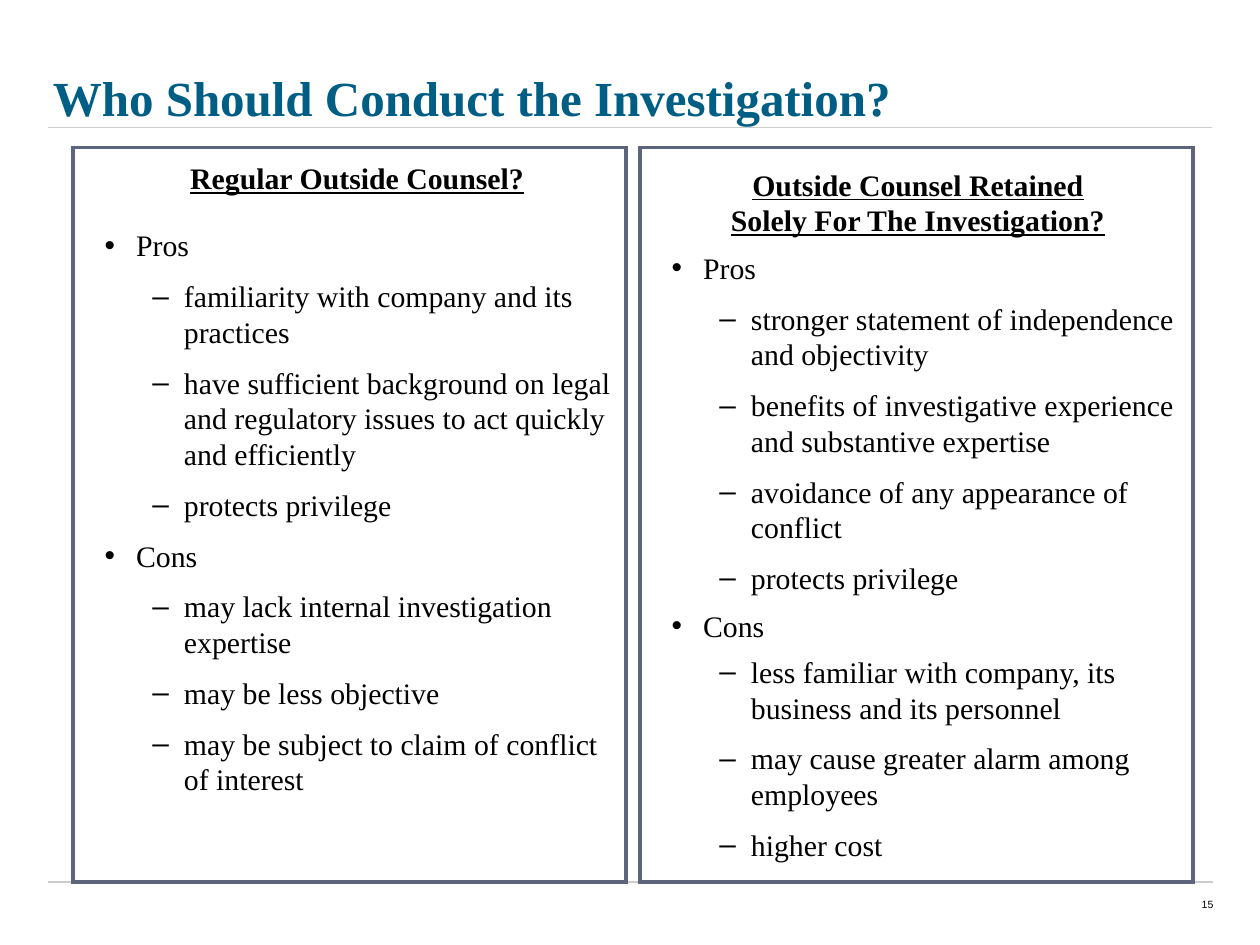
from pptx import Presentation
from pptx.dml.color import RGBColor
from pptx.enum.shapes import MSO_CONNECTOR, MSO_SHAPE
from pptx.enum.text import MSO_ANCHOR, MSO_AUTO_SIZE, PP_ALIGN
from pptx.oxml.ns import qn
from pptx.util import Inches, Pt
from lxml import etree

LINE = MSO_CONNECTOR.STRAIGHT
RECT = MSO_SHAPE.RECTANGLE
TOP, MIDDLE, BOTTOM = MSO_ANCHOR.TOP, MSO_ANCHOR.MIDDLE, MSO_ANCHOR.BOTTOM
LEFT, CENTER, RIGHT = PP_ALIGN.LEFT, PP_ALIGN.CENTER, PP_ALIGN.RIGHT
NO_FIT = MSO_AUTO_SIZE.NONE

SERIF, SANS = "Times New Roman", "Arial"
COLORS = {"title": "005E85", "text": "000000", "rule": "CCCCCC", "frame": "5C657C"}
GAP = 8.6    # usual space after a point
LEAD = 6.8   # space before a topic, 40% of the text size

# Bullet mark and left margin for each level
LEVELS = {1: ("•", 0.5), 2: ("–", 0.88)}

# Points: level, text, space before, space after
REGULAR = [
    (1, "Pros", 0, GAP),
    (2, "familiarity with company and its practices", 0, GAP),
    (2, "have sufficient background on legal and regulatory issues "
        "to act quickly and efficiently", 0, GAP),
    (2, "protects privilege", 0, GAP),
    (1, "Cons", 0, GAP),
    (2, "may lack internal investigation expertise", 0, GAP),
    (2, "may be less objective", 0, GAP),
    (2, "may be subject to claim of conflict of interest", 0, GAP),
]
RETAINED = [
    (1, "Pros", LEAD, GAP),
    (2, "stronger statement of independence and objectivity", 0, GAP),
    (2, "benefits of investigative experience and substantive expertise", 0, GAP),
    (2, "avoidance of any appearance of conflict", 0, GAP),
    (2, "protects privilege", 0, 0),
    (1, "Cons", LEAD, 6),
    (2, "less familiar with company, its business and its personnel", 0, GAP),
    (2, "may cause greater alarm among employees", 0, GAP),
    (2, "higher cost", 0, 0),
]


def color(name):
    return RGBColor.from_string(COLORS[name])


def set_font(para, size, name=SERIF, tint="text", bold=False, under=False):
    font = para.font
    font.size, font.name = Pt(size), name
    font.bold, font.underline = bold, under
    font.color.rgb = color(tint)


def set_frame(frame, anchor, insets=(0, 0, 0, 0)):
    frame.word_wrap = True
    frame.auto_size = NO_FIT
    frame.vertical_anchor = anchor
    (frame.margin_left, frame.margin_top,
     frame.margin_right, frame.margin_bottom) = map(Inches, insets)


def set_indent(para, margin, first=0, mark=None):
    props = para._p.get_or_add_pPr()
    props.set("marL", str(Inches(margin)))
    props.set("indent", str(Inches(first)))
    if mark:
        etree.SubElement(props, qn("a:buFont")).set("typeface", SANS)
        etree.SubElement(props, qn("a:buChar")).set("char", mark)


def add_rule(slide, left, right, y):
    rule = slide.shapes.add_connector(
        LINE, Inches(left), Inches(y), Inches(right), Inches(y))
    rule.line.color.rgb = color("rule")
    rule.line.width = Pt(0.75)
    etree.SubElement(rule._element.spPr, qn("a:effectLst"))


def add_title(slide, text):
    title = slide.shapes.title
    title.left, title.top = Inches(0.42), Inches(0.33)
    title.width, title.height = Inches(9), Inches(0.67)
    set_frame(title.text_frame, BOTTOM)
    title.text_frame.text = text
    para = title.text_frame.paragraphs[0]
    para.alignment = LEFT
    set_font(para, 28, tint="title", bold=True)


def add_panel(slide, left, insets, head, after, points):
    panel = slide.shapes.add_shape(
        RECT, Inches(left), Inches(1.17), Inches(4.39), Inches(5.83))
    panel.shadow.inherit = False
    panel.fill.background()
    panel.line.color.rgb = color("frame")
    panel.line.width = Pt(2)
    # Square corners
    edge = panel._element.spPr.find(qn("a:ln"))
    etree.SubElement(edge, qn("a:miter")).set("lim", "800000")
    frame = panel.text_frame
    set_frame(frame, TOP, insets)

    # Heading
    para = frame.paragraphs[0]
    para.text = head
    para.alignment = CENTER
    para.space_after = Pt(after)
    set_indent(para, 0.12)
    set_font(para, 17, bold=True, under=True)

    # Points
    for level, text, before, after in points:
        mark, margin = LEVELS[level]
        para = frame.add_paragraph()
        para.text = text
        para.alignment = LEFT
        para.space_before, para.space_after = Pt(before), Pt(after)
        set_indent(para, margin, -0.25, mark)
        set_font(para, 17)


def add_number(slide, text):
    box = slide.shapes.add_textbox(
        Inches(6.71), Inches(7), Inches(2.92), Inches(0.35))
    set_frame(box.text_frame, MIDDLE)
    para = box.text_frame.paragraphs[0]
    para.text = text
    para.alignment = RIGHT
    set_font(para, 6, SANS)


def main():
    deck = Presentation()
    deck.slide_width, deck.slide_height = Inches(10), Inches(7.5)
    slide = deck.slides.add_slide(deck.slide_layouts[5])

    # Rules under the title and along the foot
    add_rule(slide, 0.38, 9.62, 1.01)
    for left in (0.38, 3.55, 6.71):
        add_rule(slide, left, left + 2.92, 7)

    # Title, the two panels and the page number
    add_title(slide, "Who Should Conduct the Investigation?")
    add_panel(slide, 0.58, (0, 0.1, 0, 0),
              "Regular Outside Counsel?", 18, REGULAR)
    add_panel(slide, 5.08, (0, 0.15, 0.1, 0.05),
              "Outside Counsel Retained\nSolely For The Investigation?", 0, RETAINED)
    add_number(slide, "15")

    deck.save("out.pptx")


if __name__ == "__main__":
    main()
